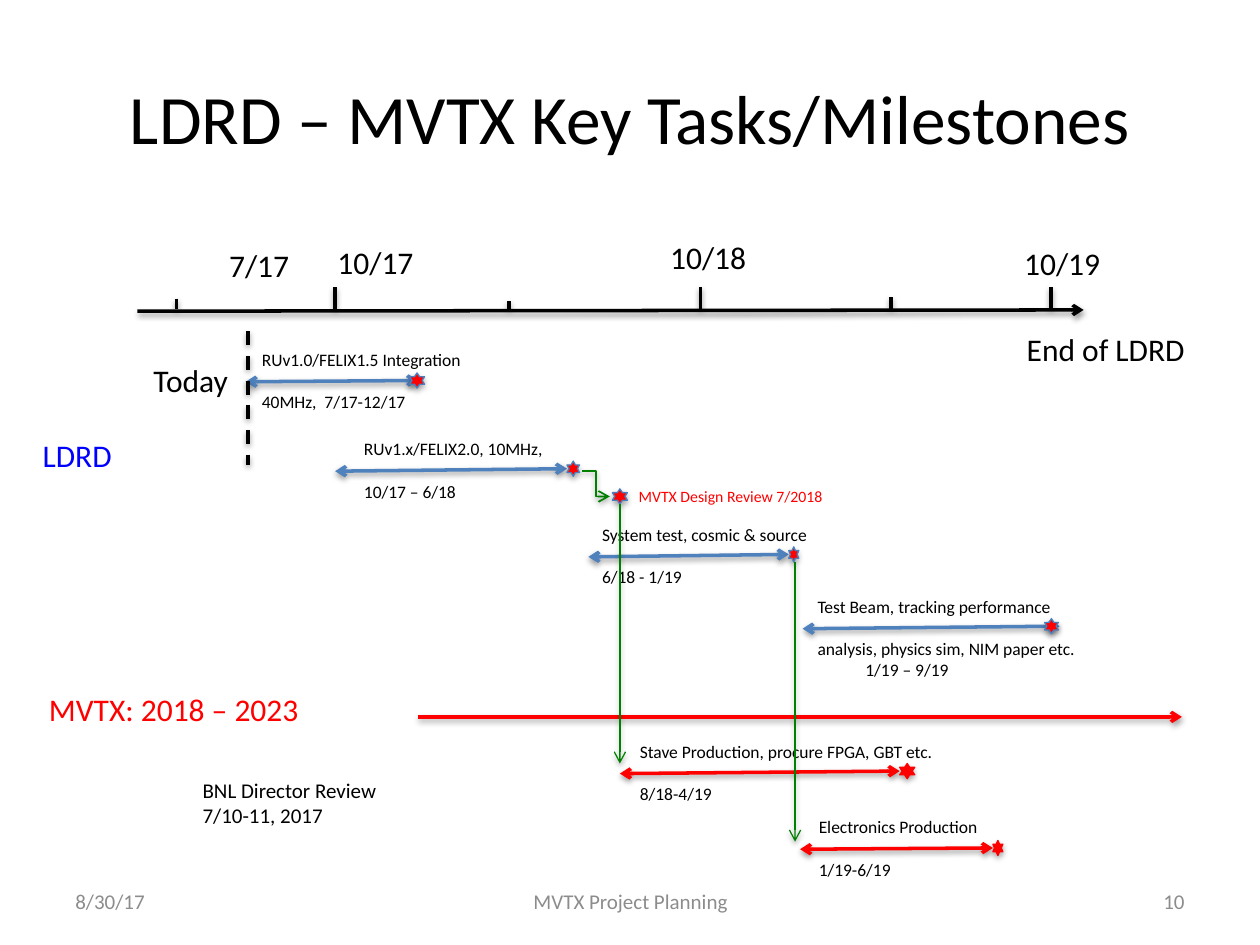
from dataclasses import dataclass

from lxml.etree import SubElement as Sub
from pptx import Presentation
from pptx.dml.color import RGBColor as Rgb
from pptx.enum.dml import MSO_LINE as Dash
from pptx.enum.shapes import MSO_CONNECTOR as Link, MSO_SHAPE as Form
from pptx.enum.text import MSO_ANCHOR as Anchor, MSO_AUTO_SIZE as Fit, PP_ALIGN as Align
from pptx.oxml.ns import qn
from pptx.util import Inches, Pt


@dataclass(frozen=True)
class Theme:
    font: str = "Calibri"
    black: str = "000000"
    blue: str = "4F81BD"
    edge: str = "4B7EBC"
    red: str = "FF0000"
    green: str = "008000"
    link: str = "0000FF"
    gray: str = "8C8C8C"
    title: float = 39.6
    head: float = 18
    note: float = 12
    body: float = 10
    tiny: float = 9
    gap: float = 12.2   # space between the two halves of a task caption
    bar: float = 2
    thin: float = 0.75


T = Theme()
COLS, ROWS = 100, 75    # grid of the slide, ten cells to the inch


def cell(n):
    return Inches(n / 10)


def apply(obj, vals):
    for key, val in vals.items():
        setattr(obj, key, val)


def write(frame, lines, size, color, align=Align.LEFT):
    """Fill a text frame with one paragraph per line."""
    for i, line in enumerate(lines):
        para = frame.paragraphs[0] if i == 0 else frame.add_paragraph()
        para.alignment = align
        run = para.add_run()
        run.text = line
        apply(run.font, {"name": T.font, "size": Pt(size)})
        run.font.color.rgb = Rgb.from_string(color)


def label(slide, box, lines, size, color=T.black, align=Align.LEFT, **vals):
    frame = slide.shapes.add_textbox(*map(cell, box)).text_frame
    apply(frame, {"word_wrap": False, "auto_size": Fit.SHAPE_TO_FIT_TEXT, **vals})
    write(frame, lines, size, color, align)
    return frame


def shade(props, alpha, dist):
    """Put a soft shadow straight below a shape or line."""
    effects = props.find(qn("a:effectLst"))
    if effects is None:
        effects = Sub(props, qn("a:effectLst"))
    outer = Sub(effects, qn("a:outerShdw"), blurRad="40000", dist=str(dist),
                dir="5400000", rotWithShape="0")
    tint = Sub(outer, qn("a:srgbClr"), val=T.black)
    Sub(tint, qn("a:alpha"), val=str(alpha * 1000))


def line(slide, start, end, color=T.black, width=T.bar, tips="", kind=Link.STRAIGHT, dash=None):
    """Draw a line; tips names the ends with an arrowhead."""
    item = slide.shapes.add_connector(kind, *map(cell, (*start, *end)))
    item.line.color.rgb = Rgb.from_string(color)
    apply(item.line, {"width": Pt(width), "dash_style": dash})
    for tip in tips.split():
        Sub(item.line._get_or_add_ln(), qn(f"a:{tip}End"), type="arrow")
    shade(item._element.spPr, 38, 20000)


def star(slide, x, mid, wide, edge=T.edge):
    item = slide.shapes.add_shape(Form.STAR_6_POINT, *map(cell, (x, mid - 0.6, wide, 1.2)))
    item.shadow.inherit = False
    item.fill.solid()
    item.fill.fore_color.rgb = Rgb.from_string(T.red)
    item.line.color.rgb = Rgb.from_string(edge)
    item.line.width = Pt(T.thin)
    shade(item._element.spPr, 35, 23000)


def task(slide, span, rows, mark, text, lines, color=T.blue):
    """Draw a two-headed bar, its end star and the caption around it."""
    (x1, x2), (y1, y2) = span, rows
    line(slide, (x1, y1), (x2, y2), color, tips="head tail")
    star(slide, mark[0], y2, mark[1], T.edge if color == T.blue else color)
    left, wide = text
    frame = label(slide, (left, y1 - 3.1, wide, 6.1), lines, T.body, word_wrap=True)
    frame.paragraphs[1].space_before = Pt(T.gap)
    for para in frame.paragraphs[2:]:
        para._p.get_or_add_pPr().set("marL", str(cell(3.8)))


def axis(slide):
    """Draw the time axis with its ticks and dates."""
    line(slide, (10.9, 24.7), (86, 24.6), tips="tail")
    for x, top in ((14, 23.7), (26.6, 22.8), (40.4, 23.9), (55.6, 22.8), (70.7, 23.6), (83.4, 22.8)):
        line(slide, (x, top), (x, 24.5))
    for x, y, wide, date in ((17.2, 19, 6.8, "7/17"), (25.8, 18.8, 8.1, "10/17"),
                             (52.2, 18.4, 8.1, "10/18"), (80.3, 18.9, 8.1, "10/19")):
        label(slide, (x, y, wide, 4), [date], T.head)


def tasks(slide):
    task(slide, (19.5, 33.2), (30.3, 30.2), (32.5, 1.2), (19.8, 22.1),
         ["RUv1.0/FELIX1.5 Integration", "40MHz,  7/17-12/17"])
    task(slide, (26.6, 45), (37.4, 37.2), (45, 1), (27.9, 21.6),
         ["RUv1.x/FELIX2.0, 10MHz,", "10/17 – 6/18"])
    task(slide, (46.7, 62.6), (44.2, 44), (62.6, 0.8), (46.8, 18.6),
         ["System test, cosmic & source", "6/18 - 1/19"])
    task(slide, (63.7, 84.1), (49.9, 49.7), (82.9, 1.1), (63.9, 24),
         ["Test Beam, tracking performance", "analysis, physics sim, NIM paper etc.", "1/19 – 9/19"])
    task(slide, (49.2, 71.4), (61.4, 61.2), (71.4, 1.2), (49.8, 25.7),
         ["Stave Production, procure FPGA, GBT etc.", "8/18-4/19"], T.red)
    task(slide, (63.5, 78.8), (67.4, 67.3), (78.8, 0.8), (64, 17.3),
         ["Electronics Production", "1/19-6/19"], T.red)


def links(slide):
    """Draw the review milestone and the arrows between tasks."""
    star(slide, 48.6, 39.4, 1.2)
    label(slide, (49.7, 38.1, 16.8, 2.5), ["MVTX Design Review 7/2018"], T.tiny, T.red)
    line(slide, (46.2, 37.4), (48.4, 39.4), T.green, 1, "tail", Link.ELBOW)
    for x, top, end in ((49.2, 40, 60.6), (63.1, 44.6, 66.8)):
        line(slide, (x, top), (x, end), T.green, T.thin, "tail")


def notes(slide):
    """Name the phases and mark today."""
    line(slide, (33.2, 56.9), (93.8, 56.9), T.red, tips="tail")
    line(slide, (19.7, 26.3), (19.7, 36.9), dash=Dash.DASH)
    for box, text, color in (((2.4, 34.1, 7.6, 4), "LDRD", T.link),
                             ((2.9, 54.3, 22, 4), "MVTX: 2018 – 2023", T.red),
                             ((11.2, 28.2, 8.3, 4), "Today", T.black),
                             ((80.5, 25.7, 14.7, 4), "End of LDRD", T.black)):
        label(slide, box, [text], T.head, color)
    label(slide, (15.1, 61.2, 16, 5), ["BNL Director Review", "7/10-11, 2017"], T.note)


def footer(slide):
    for x, wide, text, align in ((5, 23.3, "8/30/17", Align.LEFT),
                                 (34.2, 31.7, "MVTX Project Planning", Align.CENTER),
                                 (71.7, 23.3, "10", Align.RIGHT)):
        label(slide, (x, 69.5, wide, 4), [text], T.note, T.gray, align, word_wrap=True,
              auto_size=Fit.NONE, vertical_anchor=Anchor.MIDDLE)


def title(slide, text):
    head = slide.shapes.title
    apply(head, dict(zip(("left", "top", "width", "height"), map(cell, (5, 3, 90, 12.5)))))
    apply(head.text_frame, {"auto_size": Fit.NONE, "word_wrap": True,
                            "vertical_anchor": Anchor.MIDDLE})
    write(head.text_frame, [text], T.title, T.black, Align.CENTER)


def main():
    deck = Presentation()
    apply(deck, {"slide_width": cell(COLS), "slide_height": cell(ROWS)})
    slide = deck.slides.add_slide(deck.slide_layouts[5])
    title(slide, "LDRD – MVTX Key Tasks/Milestones")
    for part in (tasks, axis, notes, links, footer):
        part(slide)
    deck.save("out.pptx")


if __name__ == "__main__":
    main()
